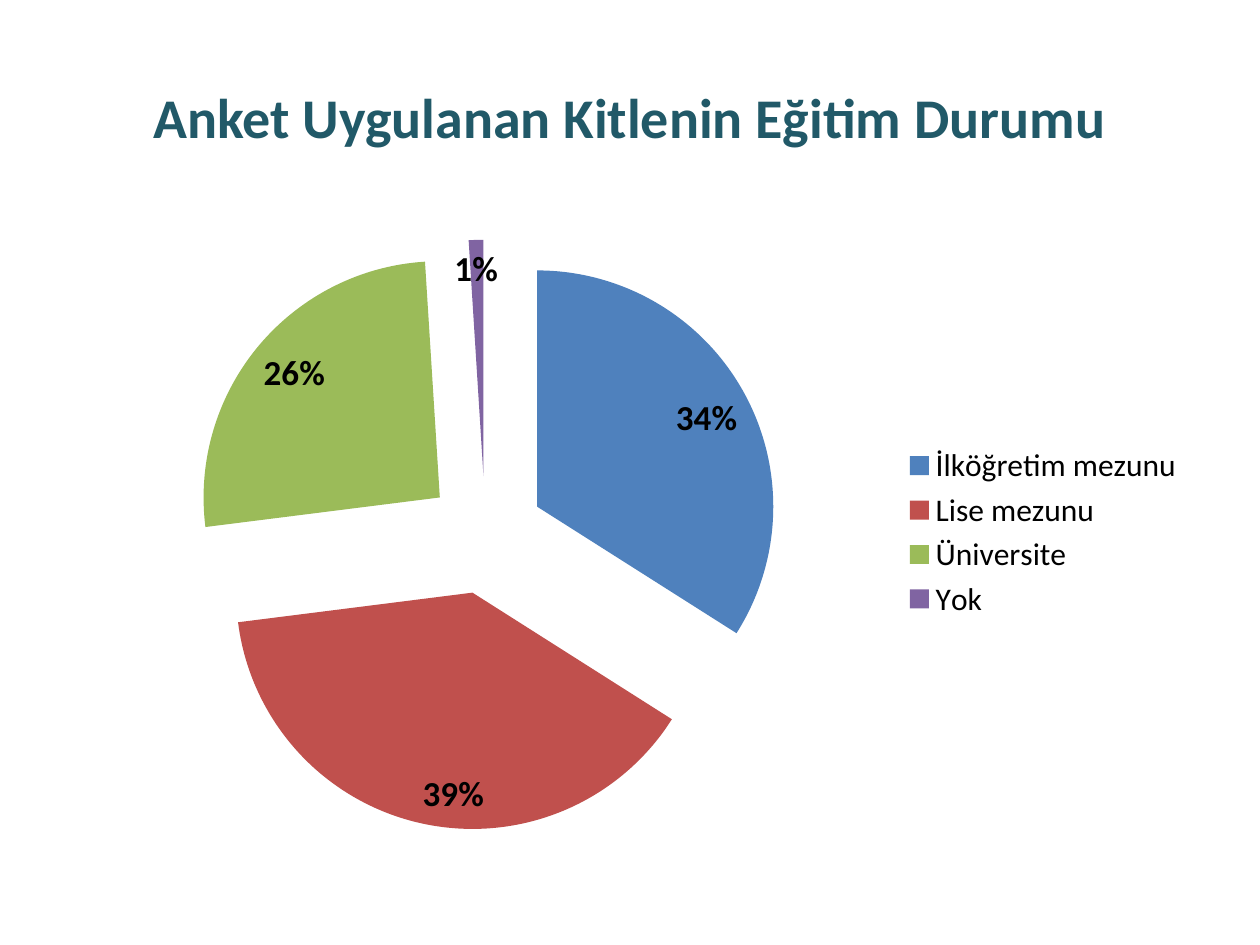
from dataclasses import dataclass

from lxml import etree
from pptx import Presentation
from pptx.chart.data import CategoryChartData
from pptx.dml.color import RGBColor
from pptx.enum import chart as charts, text
from pptx.oxml.ns import qn
from pptx.util import Inches, Pt


@dataclass(frozen=True)
class Theme:
    font: str = "Calibri"
    title_color: str = "215968"
    text_color: str = "000000"
    title_size: int = 32
    label_size: int = 20
    legend_size: int = 18


THEME = Theme()
EDUCATION = [
    ("İlköğretim mezunu", 0.34, "4F81BD"),
    ("Lise mezunu", 0.39, "C0504D"),
    ("Üniversite ", 0.26, "9BBB59"),
    ("Yok", 0.01, "8064A2"),
]
PLOT_AREA = {"x": 0.017, "y": 0.031, "w": 0.711, "h": 0.947}
EXPLOSION = 25


def format_font(font, size, color=THEME.text_color, bold=False):
    font.name = THEME.font
    font.size = Pt(size)
    font.bold = bold
    font.color.rgb = RGBColor.from_string(color)


def add_text(slide, box, content, align=text.PP_ALIGN.CENTER, **font_format):
    frame = slide.shapes.add_textbox(*box).text_frame
    frame.word_wrap = True
    frame.vertical_anchor = text.MSO_ANCHOR.MIDDLE
    paragraph = frame.paragraphs[0]
    paragraph.alignment = align
    run = paragraph.add_run()
    run.text = content
    format_font(run.font, **font_format)


def add_title(slide, box):
    add_text(slide, box, "Anket Uygulanan Kitlenin Eğitim Durumu",
             size=THEME.title_size, color=THEME.title_color, bold=True)


def add_value(parent, tag, value):
    etree.SubElement(parent, qn(f"c:{tag}")).set("val", str(value))


def set_plot_area(chart):
    plot_area = chart.plots[0]._element.getparent()
    for old_layout in plot_area.findall(qn("c:layout")):
        plot_area.remove(old_layout)
    layout = etree.Element(qn("c:layout"))
    plot_area.insert(0, layout)
    manual = etree.SubElement(layout, qn("c:manualLayout"))
    add_value(manual, "layoutTarget", "inner")
    for axis in ("x", "y"):
        add_value(manual, f"{axis}Mode", "edge")
    for side, share in PLOT_AREA.items():
        add_value(manual, side, share)


def explode(series):
    explosion = etree.Element(qn("c:explosion"))
    explosion.set("val", str(EXPLOSION))
    series._element.find(qn("c:dPt")).addprevious(explosion)


def add_education_pie(slide, box):
    levels, shares, colors = zip(*EDUCATION)
    data = CategoryChartData(number_format="0%")
    data.categories = levels
    data.add_series("Series 1", shares)
    chart = slide.shapes.add_chart(charts.XL_CHART_TYPE.PIE, *box, data).chart
    chart.has_title = False
    format_font(chart.font, THEME.legend_size)

    chart.has_legend = True
    chart.legend.position = charts.XL_LEGEND_POSITION.RIGHT
    chart.legend.include_in_layout = False
    format_font(chart.legend.font, THEME.legend_size)

    plot = chart.plots[0]
    plot.vary_by_categories = True
    series = plot.series[0]
    for index, color in enumerate(colors):
        fill = series.points[index].format.fill
        fill.solid()
        fill.fore_color.rgb = RGBColor.from_string(color)
    explode(series)

    labels = series.data_labels
    labels.show_value = True
    labels.number_format = "0%"
    labels.number_format_is_linked = False
    labels.position = charts.XL_LABEL_POSITION.INSIDE_END
    format_font(labels.font, THEME.label_size, bold=True)
    set_plot_area(chart)


def main():
    deck = Presentation()
    deck.slide_width, deck.slide_height = Inches(10), Inches(7.5)
    slide = deck.slides.add_slide(deck.slide_layouts[6])
    left, width = Inches(0.5), Inches(9)
    add_education_pie(slide, (left, Inches(1.75), width, Inches(4.95)))
    add_title(slide, (left, Inches(0.3), width, Inches(1.25)))
    deck.save("out.pptx")


if __name__ == "__main__":
    main()
